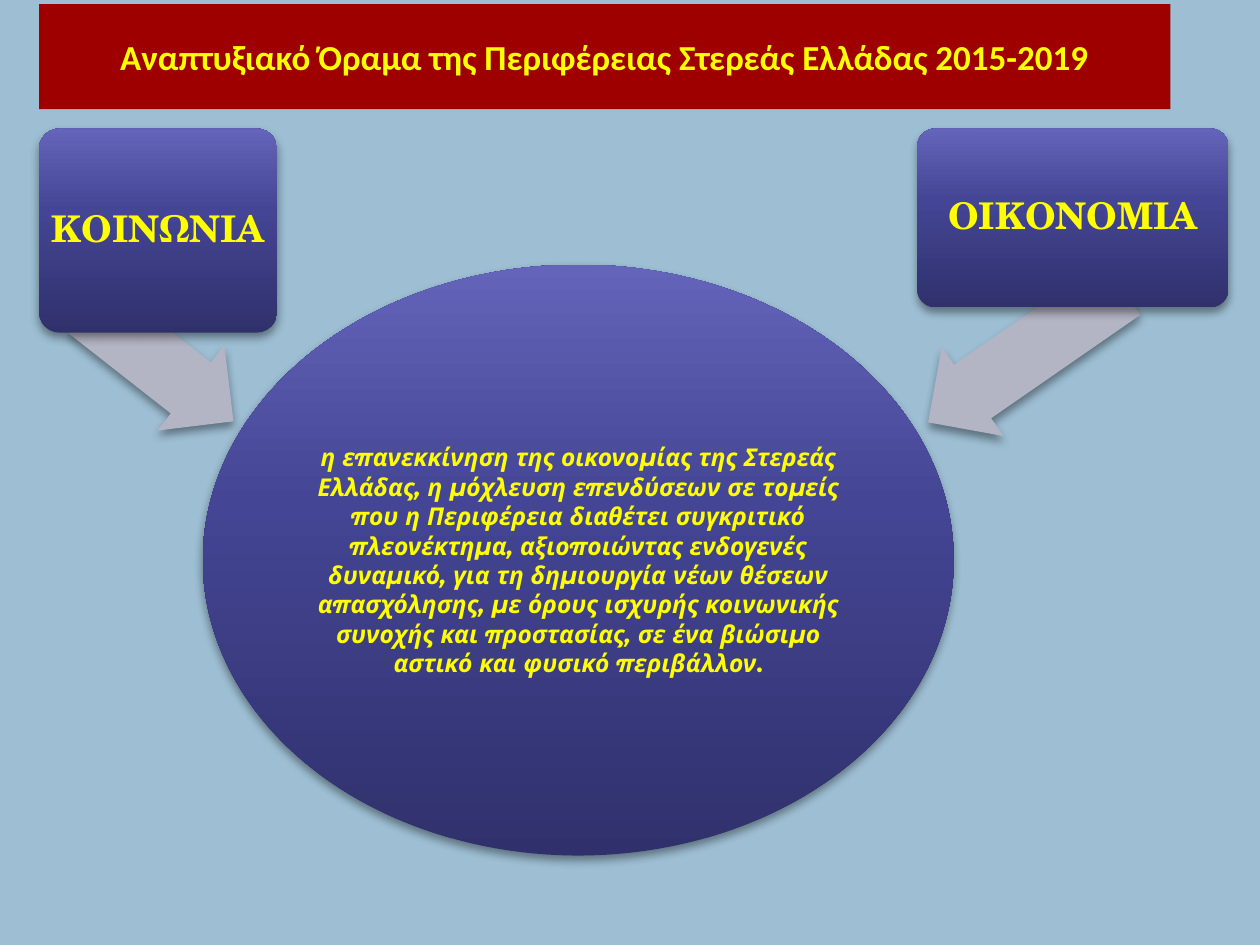
from lxml.etree import SubElement
from pptx import Presentation
from pptx.dml.color import RGBColor
from pptx.enum.shapes import MSO_SHAPE
from pptx.enum.text import MSO_ANCHOR, MSO_AUTO_SIZE, PP_ALIGN
from pptx.oxml.ns import qn
from pptx.util import Inches, Pt

COLOURS = {
    "background": "9DBED3",
    "banner": "9E0000",
    "text": "FFFF00",
    "arrow": "B3B4C4",
    "shadow": "000000",
}
GRADIENT = {0: "30316C", 60: "444594", 100: "6465BA"}
VISION = (
    "η επανεκκίνηση της οικονομίας της Στερεάς Ελλάδας, η μόχλευση επενδύσεων "
    "σε τομείς που η Περιφέρεια διαθέτει συγκριτικό πλεονέκτημα, αξιοποιώντας "
    "ενδογενές δυναμικό, για τη δημιουργία νέων θέσεων απασχόλησης, με όρους "
    "ισχυρής κοινωνικής συνοχής και προστασίας, σε ένα βιώσιμο αστικό και "
    "φυσικό περιβάλλον"
)
VISION_FONT = {"name": "Montserrat", "size": Pt(14), "bold": True, "italic": True}
PILLAR_FONT = {"name": "TeX Gyre Schola", "size": Pt(21), "bold": True}
TITLE_FONT = {"name": "Calibri", "size": Pt(20), "bold": True}


def colour(name):
    return RGBColor.from_string(COLOURS[name])


def place(shape, box):
    for side, value in zip(("left", "top", "width", "height"), box):
        setattr(shape, side, Inches(value))


def add_shadowed_shape(page, kind, box):
    shape = page.shapes.add_shape(kind, *map(Inches, box))
    shape.line.fill.background()
    shape.shadow.inherit = False
    effects = shape._element.spPr.find(qn("a:effectLst"))
    shadow = SubElement(
        effects, qn("a:outerShdw"), blurRad=str(Pt(5.2)), dist=str(Pt(3)),
        dir="5400000", rotWithShape="0",
    )
    shade = SubElement(shadow, qn("a:srgbClr"), val=COLOURS["shadow"])
    SubElement(shade, qn("a:alpha"), val="40000")
    return shape


def fill_with_gradient(shape):
    """Blend the gradient colours from the bottom edge to the top."""
    shape.fill.gradient()
    shape.fill.gradient_angle = 90
    stops = shape._element.spPr.find(qn("a:gradFill")).find(qn("a:gsLst"))
    for stop in list(stops):
        stops.remove(stop)
    for percent, value in GRADIENT.items():
        stop = SubElement(stops, qn("a:gs"), pos=str(percent * 1000))
        SubElement(stop, qn("a:srgbClr"), val=value)


def write(shape, spans, margin=None, line_spacing=None):
    """Centre one paragraph made of (text, font values) spans in the shape."""
    frame = shape.text_frame
    frame.word_wrap = True
    frame.vertical_anchor = MSO_ANCHOR.MIDDLE
    if margin is not None:
        for side in ("left", "top", "right", "bottom"):
            setattr(frame, f"margin_{side}", Inches(margin))
    para = frame.paragraphs[0]
    para.alignment = PP_ALIGN.CENTER
    para.line_spacing = line_spacing
    for text, font_values in spans:
        span = para.add_run()
        span.text = text
        span.font.color.rgb = colour("text")
        for name, value in font_values.items():
            setattr(span.font, name, value)


def add_vision(page, box):
    ellipse = add_shadowed_shape(page, MSO_SHAPE.OVAL, box)
    fill_with_gradient(ellipse)
    write(ellipse, [(VISION, VISION_FONT), (".", VISION_FONT | {"italic": False})],
          margin=0.01)


def add_pillar(page, box, label, arrow_offset, arrow_size, rotation):
    """Add a labelled box with an arrow behind it pointing to the vision."""
    left, top = box[:2]
    arrow_box = (left + arrow_offset[0], top + arrow_offset[1], *arrow_size)
    arrow = add_shadowed_shape(page, MSO_SHAPE.LEFT_ARROW, arrow_box)
    arrow.adjustments[0] = 0.6
    arrow.adjustments[1] = 0.5
    arrow.rotation = rotation
    arrow.fill.solid()
    arrow.fill.fore_color.rgb = colour("arrow")

    pillar = add_shadowed_shape(page, MSO_SHAPE.ROUNDED_RECTANGLE, box)
    pillar.adjustments[0] = 0.1
    fill_with_gradient(pillar)
    write(pillar, [(label, PILLAR_FONT)], margin=0.04, line_spacing=0.9)


def add_banner(page, box):
    title = page.shapes.title
    place(title, box)
    title.fill.solid()
    title.fill.fore_color.rgb = colour("banner")
    write(title, [("Αναπτυξιακό Όραμα της Περιφέρειας Στερεάς Ελλάδας 2015-2019",
                   TITLE_FONT)])
    title.text_frame.auto_size = MSO_AUTO_SIZE.SHAPE_TO_FIT_TEXT


def main():
    deck = Presentation()
    deck.slide_width, deck.slide_height = Inches(10), Inches(7.5)
    page = deck.slides.add_slide(deck.slide_layouts.get_by_name("Title Only"))
    page.background.fill.solid()
    page.background.fill.fore_color.rgb = colour("background")

    add_vision(page, (1.61, 2.1, 5.96, 4.69))
    add_pillar(page, (0.31, 1.02, 1.89, 1.62), "ΚΟΙΝΩΝΙΑ",
               arrow_offset=(0.23, 1.44), arrow_size=(1.47, 0.86), rotation=218.1)
    add_pillar(page, (7.28, 1.02, 2.47, 1.42), "ΟΙΚΟΝΟΜΙΑ",
               arrow_offset=(-0.08, 1.37), arrow_size=(1.87, 0.86), rotation=325.3)
    add_banner(page, (0.31, 0.23, 8.98, 0.44))
    deck.save("out.pptx")


if __name__ == "__main__":
    main()
